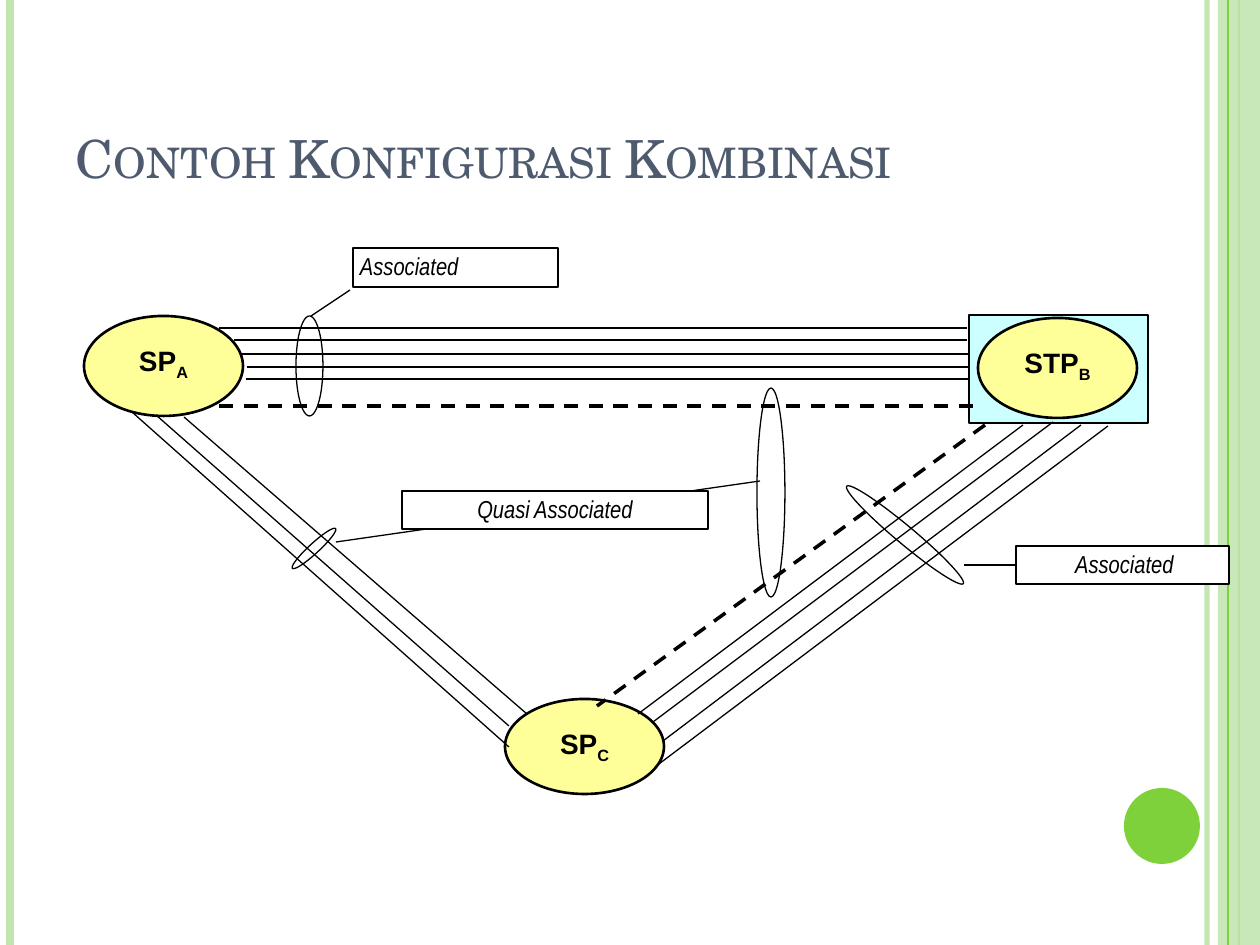
from dataclasses import dataclass
from lxml.etree import SubElement
from pptx import Presentation
from pptx.dml.color import RGBColor
from pptx.enum.dml import MSO_LINE
from pptx.enum.shapes import MSO_CONNECTOR, MSO_SHAPE
from pptx.enum.text import MSO_ANCHOR, PP_ALIGN
from pptx.oxml.ns import qn
from pptx.util import Emu, Pt

EMU_PER_PX = 914400 / 126


@dataclass(frozen=True)
class Theme:
    pale_green: str = "C0E5AF"
    green: str = "7FD13B"
    slate: str = "4E5B6F"
    yellow: str = "FFFF99"
    cyan: str = "CCFFFF"
    white: str = "FFFFFF"
    black: str = "000000"
    title_font: str = "TeX Gyre Schola"
    node_font: str = "Arial"
    note_font: str = "Arial Narrow"
    title_size: int = 30
    node_size: int = 16
    note_size: int = 14
    thin: float = 0.75
    outline: float = 1.5
    heavy: float = 2


THEME = Theme()


def px(value):
    return Emu(round(value * EMU_PER_PX))


def set_alpha(element, percent):
    color = next(element.iter(qn("a:srgbClr")))
    SubElement(color, qn("a:alpha")).set("val", str(percent * 1000))


def add_figure(page, kind, bounds, fill=None, line=None, width=THEME.thin, rotation=0):
    shape = page.shapes.add_shape(kind, *map(px, bounds))
    shape.shadow.inherit = False
    shape.rotation = rotation
    if fill:
        shape.fill.solid()
        shape.fill.fore_color.rgb = RGBColor.from_string(fill)
    else:
        shape.fill.background()
    if line:
        shape.line.color.rgb = RGBColor.from_string(line)
        shape.line.width = Pt(width)
    else:
        shape.line.fill.background()
    return shape


def add_line(page, start, end, color=THEME.black, width=THEME.thin, dashed=False):
    line = page.shapes.add_connector(MSO_CONNECTOR.STRAIGHT, *map(px, start + end))
    line.line.color.rgb = RGBColor.from_string(color)
    line.line.width = Pt(width)
    if dashed:
        line.line.dash_style = MSO_LINE.DASH
    SubElement(line._element.spPr, qn("a:effectLst"))
    return line


def write_text(box, text, font, size, color=THEME.black, subscript="", bold=False,
               italic=False, small_caps=False, align=PP_ALIGN.CENTER,
               anchor=MSO_ANCHOR.TOP, insets=(3, 3, 3, 3), space_after=10):
    frame = box.text_frame
    frame.word_wrap = True
    frame.vertical_anchor = anchor
    (frame.margin_left, frame.margin_top,
     frame.margin_right, frame.margin_bottom) = map(px, insets)
    para = frame.paragraphs[0]
    para.alignment = align
    para.space_after = Pt(space_after)
    for content, baseline in ((text, 0), (subscript, -25)):
        if not content:
            continue
        span = para.add_run()
        span.text = content
        span.font.name = font
        span.font.size = Pt(size)
        span.font.bold = bold
        span.font.italic = italic
        span.font.color.rgb = RGBColor.from_string(color)
        properties = span._r.get_or_add_rPr()
        if baseline:
            properties.set("baseline", str(baseline * 1000))
        if small_caps:
            properties.set("cap", "small")


def add_node(page, left, top, height, name, subscript, label_width=123):
    width = 159
    add_figure(page, MSO_SHAPE.OVAL, (left, top, width, height),
               THEME.yellow, THEME.black, THEME.outline)
    label_left = left + (width - label_width) / 2
    box = page.shapes.add_textbox(*map(px, (label_left, top + 25, label_width, 48)))
    write_text(box, name, THEME.node_font, THEME.node_size,
               subscript=subscript, bold=True)


def add_note(page, bounds, text, align=PP_ALIGN.CENTER, left_inset=3):
    box = add_figure(page, MSO_SHAPE.RECTANGLE, bounds, THEME.white, THEME.black)
    write_text(box, text, THEME.note_font, THEME.note_size, italic=True,
               align=align, insets=(left_inset, 3, 3, 3))
    return box


def add_ring(page, bounds, rotation=0):
    add_figure(page, MSO_SHAPE.OVAL, bounds, line=THEME.black, rotation=rotation)


def add_trunks(page, trunks):
    for start, end in trunks:
        add_line(page, start, end)


def add_decoration(page):
    edge = add_line(page, (1207, 0), (1207, 945), THEME.pale_green, 3)
    set_alpha(edge._element, 93)
    add_line(page, (10, 0), (10, 945), THEME.pale_green, 4.5)
    add_line(page, (1239, 0), (1239, 945), THEME.green, 1.5)
    band = add_figure(page, MSO_SHAPE.RECTANGLE, (1218, 0, 42, 945), THEME.pale_green)
    set_alpha(band._element, 87)
    add_line(page, (1228, 0), (1228, 945), THEME.green)
    add_figure(page, MSO_SHAPE.OVAL, (1124, 788, 76, 76), THEME.green)


def add_title(page, text):
    box = page.shapes.add_textbox(*map(px, (63, 38, 1029, 157)))
    write_text(box, text, THEME.title_font, THEME.title_size, color=THEME.slate,
               small_caps=True, align=PP_ALIGN.LEFT, anchor=MSO_ANCHOR.BOTTOM,
               insets=(13, 6, 13, 6), space_after=0)


def add_network(page):
    add_node(page, 84, 316, 100, "SP", "A")
    add_figure(page, MSO_SHAPE.RECTANGLE, (969, 315, 179, 108), THEME.cyan, THEME.black)
    add_node(page, 978, 318, 100, "STP", "B", label_width=149)
    add_trunks(page, [((left, y), (right, y)) for left, right, y in (
        (219, 967, 328), (234, 967, 340), (241, 969, 354),
        (247, 969, 367), (246, 969, 379))])
    add_line(page, (219, 406), (973, 406), width=THEME.heavy, dashed=True)
    add_node(page, 505, 699, 95, "SP", "C")
    add_trunks(page, [
        ((132, 412), (509, 747)),
        ((156, 415), (509, 726)),
        ((184, 417), (527, 714)),
        ((1108, 426), (655, 767)),
        ((1081, 425), (663, 741)),
        ((1053, 422), (653, 722)),
        ((1023, 425), (638, 714)),
    ])
    add_line(page, (985, 425), (597, 706), width=THEME.heavy, dashed=True)


def add_notes(page):
    add_ring(page, (309, 519, 10, 59), rotation=47.4)
    add_ring(page, (757, 388, 28, 209))
    add_line(page, (336, 542), (760, 481))
    add_note(page, (402, 491, 306, 38), "Quasi Associated")
    add_ring(page, (296, 316, 27, 100))
    add_line(page, (350, 290), (311, 316))
    add_note(page, (353, 248, 205, 39), "Associated", align=PP_ALIGN.LEFT, left_inset=7)
    add_ring(page, (896, 459, 18, 152), rotation=309.9)
    note = add_note(page, (1016, 546, 213, 38), "Associated", left_inset=7)
    pointer = add_line(page, (964, 565), (1016, 565))
    pointer.end_connect(note, 1)


def main():
    deck = Presentation()
    deck.slide_width = px(1260)
    deck.slide_height = px(945)
    page = deck.slides.add_slide(deck.slide_layouts[6])
    add_decoration(page)
    add_title(page, "Contoh Konfigurasi Kombinasi")
    add_network(page)
    add_notes(page)
    deck.save("out.pptx")


if __name__ == "__main__":
    main()
